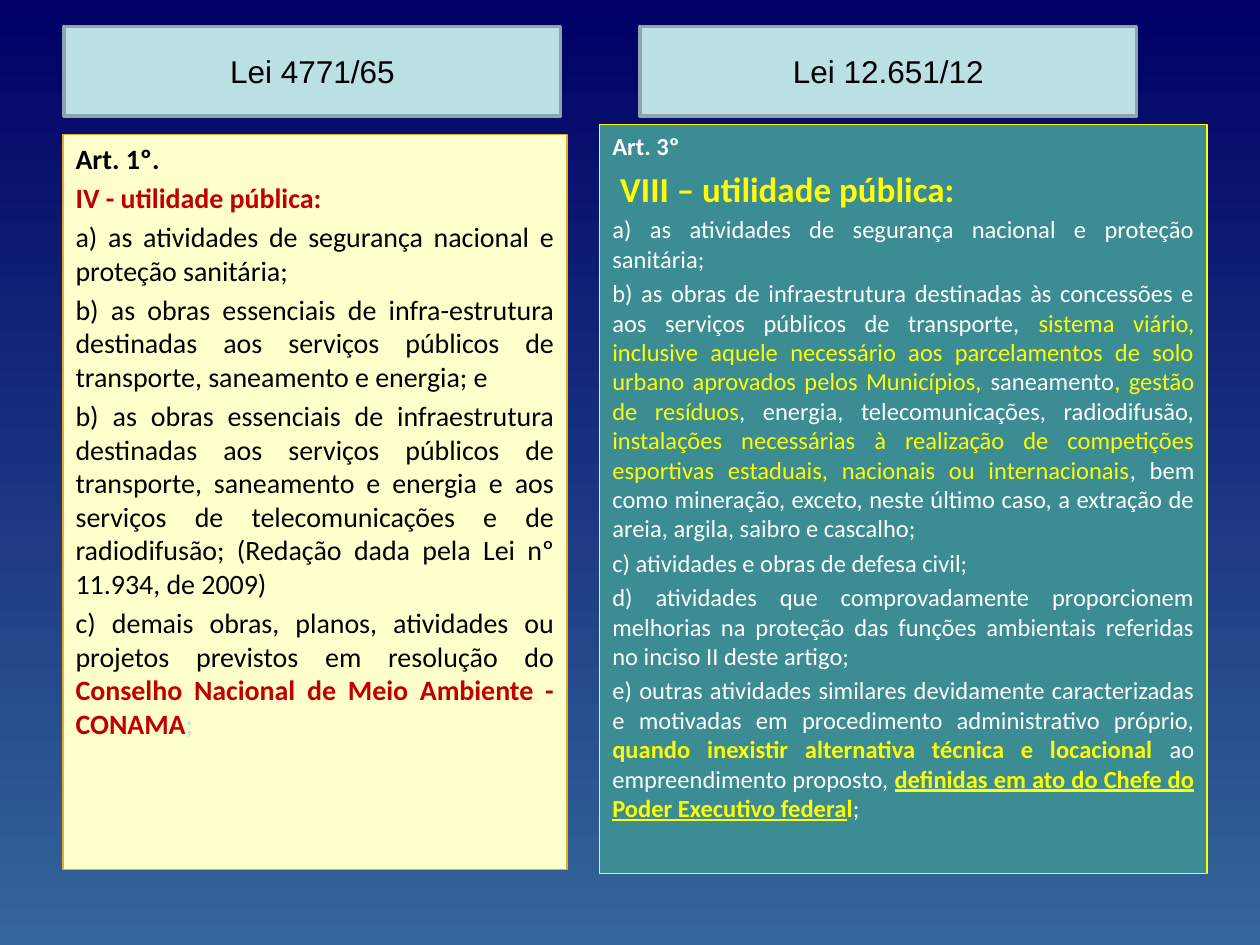
from typing import NamedTuple

from pptx import Presentation
from pptx.dml.color import RGBColor
from pptx.enum.shapes import MSO_SHAPE
from pptx.enum.text import MSO_ANCHOR, MSO_AUTO_SIZE, PP_ALIGN
from pptx.oxml.ns import qn
from pptx.util import Inches, Pt

NAVY = RGBColor(0x00, 0x00, 0x66)
BLUE = RGBColor(0x33, 0x66, 0x99)
CREAM = RGBColor(0xFF, 0xFF, 0xCC)
AMBER = RGBColor(0xE8, 0xAB, 0x30)
TEAL = RGBColor(0x3C, 0x8C, 0x93)
PALE = RGBColor(0xBB, 0xE0, 0xE3)
GRAY = RGBColor(0x8A, 0xA6, 0xA8)
YELLOW = RGBColor(0xFF, 0xFF, 0x00)
RED = RGBColor(0xC0, 0x00, 0x00)
BLACK = RGBColor(0x00, 0x00, 0x00)
WHITE = RGBColor(0xFF, 0xFF, 0xFF)


class Run(NamedTuple):
    text: str
    color: RGBColor | None = None
    bold: bool = False
    line: bool = False


class Para(NamedTuple):
    runs: list[Run]
    align: PP_ALIGN = PP_ALIGN.JUSTIFY
    size: float | None = None


class Panel(NamedTuple):
    slot: int
    box: tuple[float, float, float, float]
    fill: RGBColor
    edge: RGBColor
    color: RGBColor
    size: float
    paras: list[Para]


class Head(NamedTuple):
    text: str
    left: float


def plain(text: str) -> Para:
    return Para([Run(text)])


def paint(shape, fill: RGBColor, edge: RGBColor, width: float) -> None:
    shape.fill.solid()
    shape.fill.fore_color.rgb = fill
    shape.line.color.rgb = edge
    shape.line.width = Pt(width)


def write(frame, paras: list[Para], *, font: str, size: float,
          color: RGBColor, anchor: MSO_ANCHOR) -> None:
    frame.word_wrap = True
    frame.auto_size = MSO_AUTO_SIZE.NONE
    frame.vertical_anchor = anchor
    for i, para in enumerate(paras):
        p = frame.add_paragraph() if i else frame.paragraphs[0]
        p.alignment = para.align
        points = para.size or size
        p.space_before = Pt(points * 0.2 if i else 0)
        # No bullet and no hanging indent
        props = p._p.get_or_add_pPr()
        props.set("marL", "0")
        props.set("indent", "0")
        props.append(props.makeelement(qn("a:buNone"), {}))
        for part in para.runs:
            r = p.add_run()
            r.text = part.text
            r.font.name = font
            r.font.size = Pt(points)
            r.font.bold = part.bold
            r.font.underline = part.line
            r.font.color.rgb = part.color or color


def add_panel(slide, panel: Panel) -> None:
    shape = slide.placeholders[panel.slot]
    shape.left, shape.top, shape.width, shape.height = map(Inches, panel.box)
    paint(shape, panel.fill, panel.edge, 0.75)
    write(shape.text_frame, panel.paras, font="Calibri", size=panel.size,
          color=panel.color, anchor=MSO_ANCHOR.TOP)


def add_head(slide, head: Head) -> None:
    shape = slide.shapes.add_shape(
        MSO_SHAPE.RECTANGLE, Inches(head.left), Inches(0.21),
        Inches(3.94), Inches(0.71))
    shape.shadow.inherit = False
    paint(shape, PALE, GRAY, 2)
    write(shape.text_frame, [Para([Run(head.text)], PP_ALIGN.CENTER)],
          font="Arial", size=18, color=BLACK, anchor=MSO_ANCHOR.MIDDLE)


HEADS = [Head("Lei 4771/65", 0.51), Head("Lei 12.651/12", 5.08)]

OLD = [
    Para([Run("Art. 1º.", bold=True)], PP_ALIGN.LEFT),
    Para([Run("IV - utilidade pública:", RED, True)], PP_ALIGN.LEFT),
    plain("a) as atividades de segurança nacional e proteção sanitária;"),
    plain("b) as obras essenciais de infra-estrutura destinadas aos serviços "
          "públicos de transporte, saneamento e energia; e"),
    plain("b) as obras essenciais de infraestrutura destinadas aos serviços "
          "públicos de transporte, saneamento e energia e aos serviços de "
          "telecomunicações e de radiodifusão; (Redação dada pela Lei nº "
          "11.934, de 2009)"),
    Para([
        Run("c) demais obras, planos, atividades ou projetos previstos em "
            "resolução do "),
        Run("Conselho Nacional de Meio Ambiente - CONAMA", RED, True),
        Run(";", PALE),
    ]),
]

NEW = [
    Para([Run("Art. 3º", bold=True)]),
    Para([Run(" VIII – utilidade pública:", YELLOW, True)], size=20),
    plain("a) as atividades de segurança nacional e proteção sanitária;"),
    Para([
        Run("b) as obras de infraestrutura destinadas às concessões e aos "
            "serviços públicos de transporte, "),
        Run("sistema viário, inclusive aquele necessário aos parcelamentos "
            "de solo urbano aprovados pelos Municípios,", YELLOW),
        Run(" saneamento"),
        Run(", gestão de resíduos", YELLOW),
        Run(", energia, telecomunicações, radiodifusão, "),
        Run("instalações necessárias à realização de competições esportivas "
            "estaduais, nacionais ou internacionais", YELLOW),
        Run(", bem como mineração, exceto, neste último caso, a extração de "
            "areia, argila, saibro e cascalho;"),
    ]),
    plain("c) atividades e obras de defesa civil;"),
    plain("d) atividades que comprovadamente proporcionem melhorias na "
          "proteção das funções ambientais referidas no inciso II deste "
          "artigo;"),
    Para([
        Run("e) outras atividades similares devidamente caracterizadas e "
            "motivadas em procedimento administrativo próprio, "),
        Run("quando inexistir alternativa técnica e locacional", YELLOW, True),
        Run(" ao empreendimento proposto, "),
        Run("definidas em ato do Chefe do Poder Executivo federa",
            YELLOW, True, True),
        Run("l", YELLOW, True),
        Run(";"),
    ]),
]

PANELS = [
    Panel(1, (0.5, 1.07, 4, 5.83), CREAM, AMBER, BLACK, 16, OLD),
    Panel(2, (4.76, 0.99, 4.82, 5.94), TEAL, YELLOW, WHITE, 14, NEW),
]


def main() -> None:
    deck = Presentation()
    deck.slide_width, deck.slide_height = Inches(10), Inches(7.5)
    slide = deck.slides.add_slide(deck.slide_layouts[3])

    # Background fades from top to bottom
    back = slide.background.fill
    back.gradient()
    back.gradient_angle = 270
    for stop, color, place in zip(back.gradient_stops, (NAVY, BLUE), (0, 1)):
        stop.color.rgb = color
        stop.position = place

    # The two laws have their own headings, so the title slot goes
    title = slide.shapes.title.element
    title.getparent().remove(title)

    # Law texts, then headings
    for panel in PANELS:
        add_panel(slide, panel)
    for head in HEADS:
        add_head(slide, head)

    deck.save("out.pptx")


if __name__ == "__main__":
    main()
